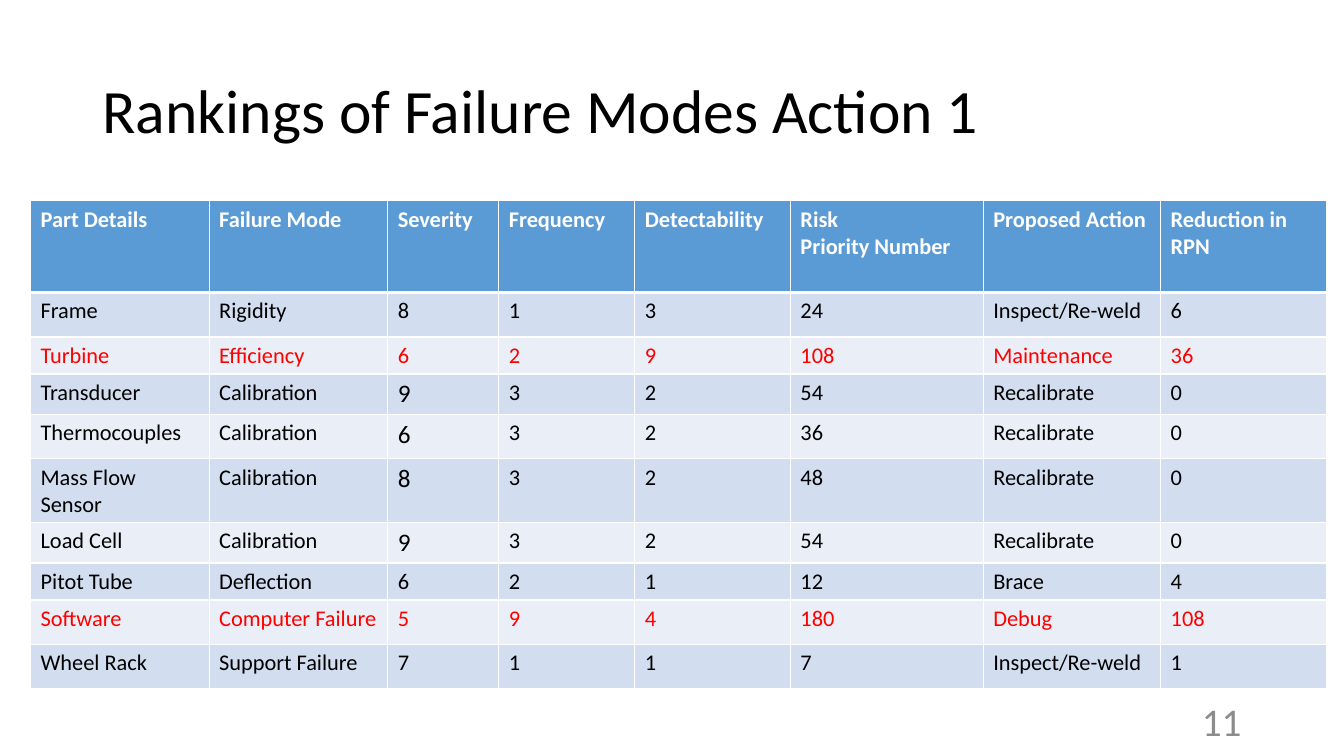
from lxml.etree import SubElement
from pptx import Presentation
from pptx.dml.color import RGBColor
from pptx.enum.text import MSO_ANCHOR, PP_ALIGN
from pptx.oxml.ns import qn
from pptx.util import Cm, Pt

FONT = "Calibri"
WHITE, BLACK, RED, GRAY = "FFFFFF", "000000", "FF0000", "8C8C8C"
HEADER_FILL, BAND_FILLS = "5B9BD5", ("D2DEEF", "EAEFF7")
COL_WIDTHS = (4.5, 4.5, 2.8, 3.43, 3.92, 4.86, 4.47, 4.19)
ROW_HEIGHTS = (2.31, 1.12, 0.89, 0.97, 1.12, 1.55, 0.97, 0.89, 1.12, 1.12)
HEADERS = ("Part Details", "Failure Mode", "Severity", "Frequency", "Detectability",
           "Risk\nPriority Number", "Proposed Action", "Reduction in RPN")
FAILURES = (
    ("Frame", "Rigidity", 8, 1, 3, 24, "Inspect/Re-weld", 6),
    ("Turbine", "Efficiency", 6, 2, 9, 108, "Maintenance", 36),
    ("Transducer", "Calibration", 9, 3, 2, 54, "Recalibrate", 0),
    ("Thermocouples", "Calibration", 6, 3, 2, 36, "Recalibrate", 0),
    ("Mass Flow Sensor", "Calibration", 8, 3, 2, 48, "Recalibrate", 0),
    ("Load Cell", "Calibration", 9, 3, 2, 54, "Recalibrate", 0),
    ("Pitot Tube", "Deflection", 6, 2, 1, 12, "Brace", 4),
    ("Software", "Computer Failure", 5, 9, 4, 180, "Debug", 108),
    ("Wheel Rack", "Support Failure", 7, 1, 1, 7, "Inspect/Re-weld", 1),
)
SEVERITY_COL, RPN_COL = 2, 5
CRITICAL_RPN = 100


def rgb(value):
    """Return the colour for a hex string."""
    return RGBColor.from_string(value)


def write(tf, text, size=16, color=BLACK, bold=False, align=PP_ALIGN.LEFT, spacing=None):
    """Fill a text frame, one paragraph for each line of text."""
    tf.word_wrap = True
    for i, line in enumerate(text.split("\n")):
        p = tf.paragraphs[0] if i == 0 else tf.add_paragraph()
        p.alignment = align
        p.line_spacing = spacing
        r = p.add_run()
        r.text = line
        r.font.name = FONT
        r.font.size = Pt(size)
        r.font.bold = bold
        r.font.color.rgb = rgb(color)


def set_borders(cell, top=1, bottom=1):
    """Draw white borders round a cell, with widths in points."""
    tc_pr = cell._tc.get_or_add_tcPr()
    for side, width in (("L", 1), ("R", 1), ("T", top), ("B", bottom)):
        ln = SubElement(tc_pr, qn(f"a:ln{side}"), w=str(Pt(width)))
        SubElement(SubElement(ln, qn("a:solidFill")), qn("a:srgbClr"), val=WHITE)


def fill_cell(cell, text, fill, top=1, bottom=1, **text_format):
    """Set the borders, fill and text of a cell."""
    set_borders(cell, top, bottom)
    cell.fill.solid()
    cell.fill.fore_color.rgb = rgb(fill)
    write(cell.text_frame, str(text), **text_format)


def add_title(slide, text):
    """Place and format the title placeholder."""
    sp = slide.shapes.title
    sp.left, sp.top, sp.width, sp.height = Cm(2.33), Cm(1.01), Cm(29.21), Cm(3.68)
    sp.text_frame.vertical_anchor = MSO_ANCHOR.MIDDLE
    write(sp.text_frame, text, size=44, spacing=0.9)


def add_page_number(slide, number):
    """Add the page number at the bottom right."""
    sp = slide.shapes.add_textbox(Cm(23.92), Cm(17.66), Cm(7.62), Cm(1.01))
    sp.text_frame.vertical_anchor = MSO_ANCHOR.MIDDLE
    write(sp.text_frame, str(number), size=28, color=GRAY, align=PP_ALIGN.RIGHT)


def add_rankings(slide):
    """Add the failure table, with critical failures in red."""
    table = slide.shapes.add_table(
        len(ROW_HEIGHTS), len(COL_WIDTHS), Cm(0.77), Cm(5.06),
        Cm(sum(COL_WIDTHS)), Cm(sum(ROW_HEIGHTS))).table
    for column, width in zip(table.columns, COL_WIDTHS):
        column.width = Cm(width)
    for row, height in zip(table.rows, ROW_HEIGHTS):
        row.height = Cm(height)
    for c, text in enumerate(HEADERS):
        fill_cell(table.cell(0, c), text, HEADER_FILL, bottom=3, color=WHITE, bold=True)
    for r, failure in enumerate(FAILURES, start=1):
        color = RED if failure[RPN_COL] > CRITICAL_RPN else BLACK
        for c, value in enumerate(failure):
            large = c == SEVERITY_COL and failure[1] == "Calibration"
            fill_cell(table.cell(r, c), value, BAND_FILLS[(r - 1) % 2],
                      top=3 if r == 1 else 1, size=18 if large else 16, color=color)


def main():
    """Build and save the slide."""
    prs = Presentation()
    prs.slide_width, prs.slide_height = Cm(33.87), Cm(19.05)
    slide = prs.slides.add_slide(prs.slide_layouts[5])
    add_title(slide, "Rankings of Failure Modes Action 1")
    add_page_number(slide, 11)
    add_rankings(slide)
    prs.save("out.pptx")


if __name__ == "__main__":
    main()
